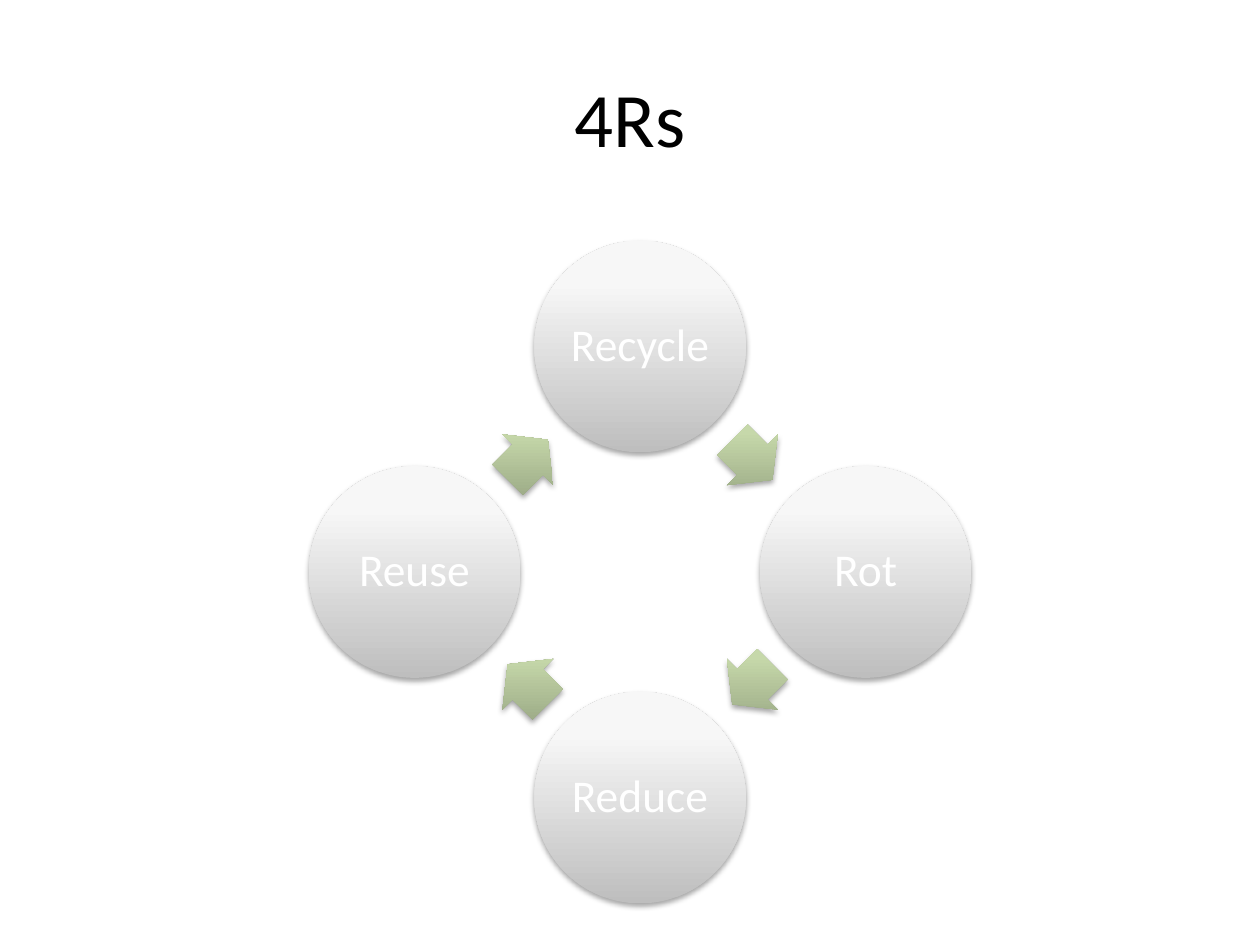
from math import cos, radians, sin

from pptx import Presentation
from pptx.dml.color import RGBColor
from pptx.enum.shapes import MSO_SHAPE
from pptx.enum.text import MSO_ANCHOR, PP_ALIGN
from pptx.oxml import parse_xml
from pptx.oxml.ns import nsdecls
from pptx.util import Inches, Pt

OVAL, ARROW = MSO_SHAPE.OVAL, MSO_SHAPE.RIGHT_ARROW
MIDDLE, CENTER = MSO_ANCHOR.MIDDLE, PP_ALIGN.CENTER

# Content, clockwise from the top
TITLE = "4Rs"
STEPS = ["Recycle", "Rot", "Reduce", "Reuse"]

# Style: gradient stops run from bottom to top
FONT = "Calibri"
BLACK = RGBColor(0x00, 0x00, 0x00)
WHITE = RGBColor(0xFF, 0xFF, 0xFF)
STOPS = (0, 80, 100)
GREYS = [RGBColor.from_string(c) for c in ("BEBEBE", "F7F7F7", "F8F8F8")]
GREENS = [RGBColor.from_string(c) for c in ("98A683", "C6D8AA", "C7DAAA")]

# Ring geometry in inches
CENTER_X, CENTER_Y = 5.08, 4.54
CIRCLE_RADIUS, CIRCLE_SIZE = 1.79, 1.68
ARROW_RADIUS, ARROW_WIDTH, ARROW_HEIGHT = 1.26, 0.45, 0.57


def write(frame, text, size, color):
    frame.text = text
    frame.word_wrap = True
    frame.vertical_anchor = MIDDLE
    para = frame.paragraphs[0]
    para.alignment = CENTER
    font = para.runs[0].font
    font.name, font.size, font.color.rgb = FONT, Pt(size), color
    return para


def add_on_ring(shapes, kind, angle, radius, width, height, colors):
    """Add a shaded shape centred on the ring; angle is clockwise from the top."""
    x = CENTER_X + radius * sin(radians(angle))
    y = CENTER_Y - radius * cos(radians(angle))
    shape = shapes.add_shape(kind, Inches(x - width / 2), Inches(y - height / 2),
                             Inches(width), Inches(height))
    stops = "".join(
        f'<a:gs pos="{stop * 1000}"><a:srgbClr val="{color}"/></a:gs>'
        for stop, color in zip(STOPS, colors))
    properties = shape.element.spPr
    properties.insert(2, parse_xml(
        f'<a:gradFill {nsdecls("a")} rotWithShape="0"><a:gsLst>{stops}</a:gsLst>'
        '<a:lin ang="16200000" scaled="0"/></a:gradFill>'))
    shape.line.fill.background()
    # Soft shadow falling straight down
    shape.shadow.inherit = False
    properties.find("{*}effectLst").append(parse_xml(
        f'<a:outerShdw {nsdecls("a")} blurRad="{Pt(3.1)}" dist="{Pt(1.8)}" '
        'dir="5400000" rotWithShape="0"><a:srgbClr val="000000">'
        '<a:alpha val="35000"/></a:srgbClr></a:outerShdw>'))
    return shape


deck = Presentation()
deck.slide_width, deck.slide_height = Inches(10), Inches(7.5)
page = deck.slides.add_slide(deck.slide_layouts[6])

# Title
title = page.shapes.add_textbox(Inches(0.5), Inches(0.3), Inches(9), Inches(1.25))
write(title.text_frame, TITLE, 44, BLACK)

# Cycle of circles, each followed by an arrow to the next
cycle = page.shapes.add_group_shape()
turn = 360 / len(STEPS)
for index, step in enumerate(STEPS):
    angle = index * turn
    circle = add_on_ring(cycle.shapes, OVAL, angle, CIRCLE_RADIUS,
                         CIRCLE_SIZE, CIRCLE_SIZE, GREYS)
    frame = circle.text_frame
    frame.margin_left = frame.margin_right = Inches(0.04)
    frame.margin_top = frame.margin_bottom = Inches(0.04)
    write(frame, step, 26, WHITE).line_spacing = 0.9

    middle = angle + turn / 2
    arrow = add_on_ring(cycle.shapes, ARROW, middle, ARROW_RADIUS,
                        ARROW_WIDTH, ARROW_HEIGHT, GREENS)
    arrow.rotation = middle
    arrow.adjustments[0], arrow.adjustments[1] = 0.6, 0.5

deck.save("out.pptx")
